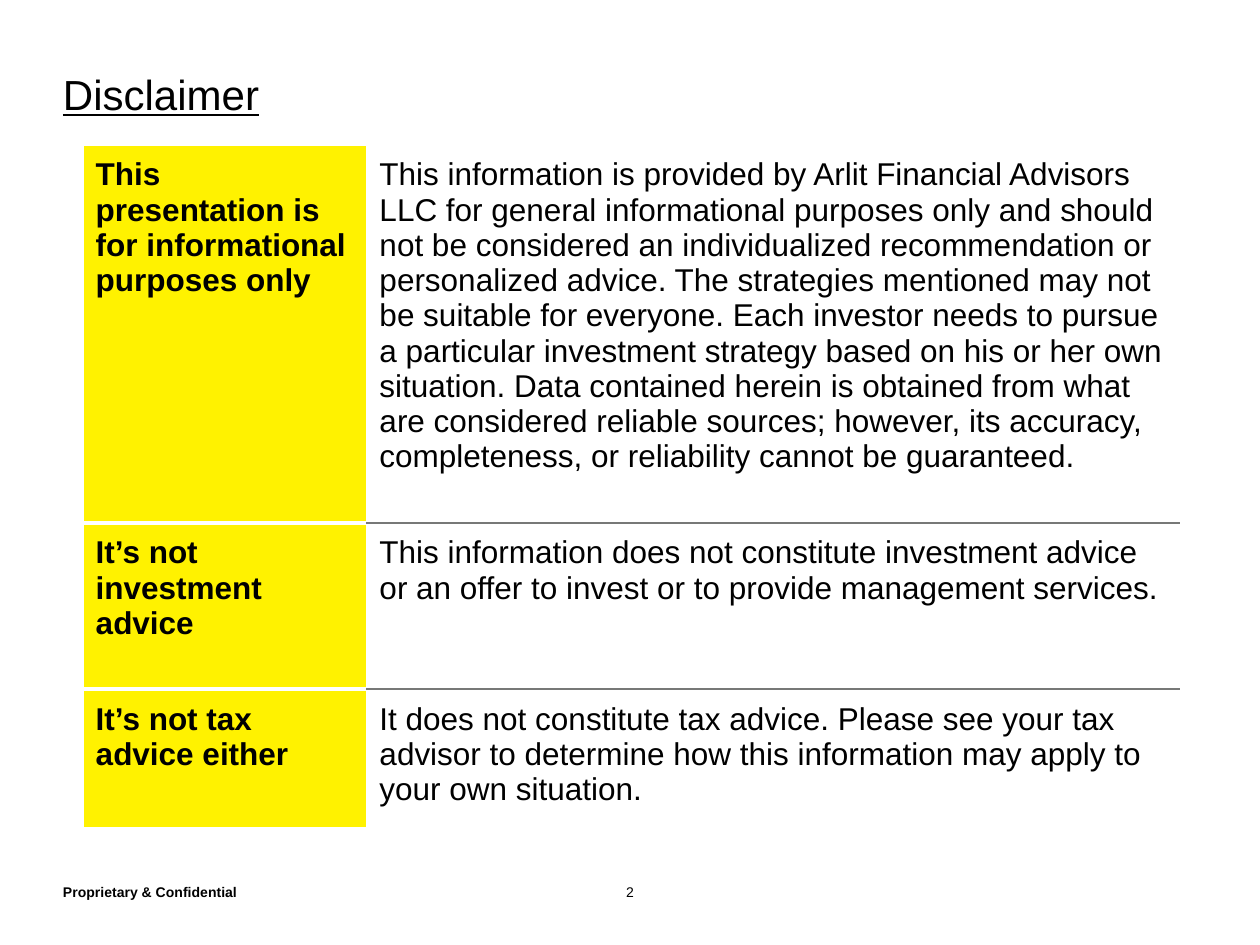
from dataclasses import dataclass
from typing import Any

from lxml.etree import SubElement
from pptx import Presentation
from pptx.dml.color import RGBColor
from pptx.enum.text import MSO_ANCHOR as Anchor, PP_ALIGN as Align
from pptx.oxml.ns import qn
from pptx.util import Cm, Pt

BLACK = RGBColor(0x00, 0x00, 0x00)
WHITE = RGBColor(0xFF, 0xFF, 0xFF)
YELLOW = RGBColor(0xFF, 0xF2, 0x00)
GRAY = RGBColor(0x77, 0x78, 0x77)

BASE = {"name": "Arial", "bold": False}
MARGINS = ("margin_left", "margin_top", "margin_right", "margin_bottom")
COL_WIDTHS = (Cm(5.72), Cm(16.38))


@dataclass
class Label:
    text: str
    left: Cm
    top: Cm
    width: Cm
    height: Cm
    font: dict[str, Any]
    anchor: Any = Anchor.BOTTOM
    align: Any = Align.LEFT
    spacing: Any = None


@dataclass
class Row:
    heading: str
    body: str
    height: Cm


LABELS = [
    Label("Disclaimer", Cm(1.27), Cm(1.27), Cm(22.86), Cm(2.03),
          {"size": Pt(24), "underline": True}, anchor=Anchor.TOP, spacing=Pt(32)),
    Label("Proprietary & Confidential", Cm(1.27), Cm(17.81), Cm(20.73), Cm(0.33),
          {"size": Pt(8), "bold": True}),
    Label("2", Cm(12.04), Cm(17.81), Cm(1.32), Cm(0.33), {"size": Pt(8)},
          align=Align.CENTER),
]

ROWS = [
    Row("This presentation is for informational purposes only",
        "This information is provided by Arlit Financial Advisors LLC for general "
        "informational purposes only and should not be considered an individualized "
        "recommendation or personalized advice. The strategies mentioned may not be "
        "suitable for everyone. Each investor needs to pursue a particular investment "
        "strategy based on his or her own situation. Data contained herein is obtained "
        "from what are considered reliable sources; however, its accuracy, "
        "completeness, or reliability cannot be guaranteed.", Cm(7.62)),
    Row("It’s not investment advice",
        "This information does not constitute investment advice or an offer to invest "
        "or to provide management services.", Cm(3.35)),
    Row("It’s not tax advice either",
        "It does not constitute tax advice. Please see your tax advisor to determine "
        "how this information may apply to your own situation.", Cm(2.62)),
]


def set_attrs(obj: Any, values: dict[str, Any]) -> None:
    """Set each named attribute on an object."""
    for name, value in values.items():
        setattr(obj, name, value)


def write(p: Any, text: str, font: dict[str, Any]) -> None:
    """Add one formatted run to a paragraph."""
    r = p.add_run()
    r.text = text
    set_attrs(r.font, BASE | font)
    r.font.color.rgb = BLACK


def add_label(s: Any, label: Label) -> None:
    """Draw a text box without margins."""
    sp = s.shapes.add_textbox(label.left, label.top, label.width, label.height)
    tf = sp.text_frame
    set_attrs(tf, dict.fromkeys(MARGINS, 0))
    set_attrs(tf, {"word_wrap": True, "vertical_anchor": label.anchor})
    p = tf.paragraphs[0]
    set_attrs(p, {"alignment": label.align, "line_spacing": label.spacing})
    write(p, label.text, label.font)


def add_border(cell: Any, side: str, color: RGBColor, width: Pt) -> None:
    """Draw one side of a cell border."""
    ln = SubElement(cell._tc.get_or_add_tcPr(), qn(f"a:ln{side}"), w=str(int(width)))
    SubElement(SubElement(ln, qn("a:solidFill")), qn("a:srgbClr"), val=str(color))


def format_cell(cell: Any, text: str, is_heading: bool, is_first: bool, is_last: bool) -> None:
    """Fill in a cell with its text, borders and background."""
    outer = (WHITE, Pt(1))
    inner = (WHITE, Pt(3)) if is_heading else (GRAY, Pt(1.5))
    borders = {"L": outer, "R": outer, "T": outer if is_first else inner,
               "B": outer if is_last else inner}
    set_attrs(cell, dict.fromkeys(MARGINS, Cm(0.25)))
    for side, (color, width) in borders.items():
        add_border(cell, side, color, width)
    if is_heading:
        cell.fill.solid()
        cell.fill.fore_color.rgb = YELLOW
    else:
        cell.fill.background()
    write(cell.text_frame.paragraphs[0], text, {"size": Pt(18), "bold": is_heading})


def add_disclaimers(s: Any, rows: list[Row]) -> None:
    """Draw the table of disclaimers."""
    height = sum(row.height for row in rows)
    table = s.shapes.add_table(len(rows), len(COL_WIDTHS), Cm(1.68), Cm(2.92),
                               sum(COL_WIDTHS), height).table
    set_attrs(table, {"first_row": False, "horz_banding": False})
    for column, width in zip(table.columns, COL_WIDTHS):
        column.width = width
    for i, row in enumerate(rows):
        table.rows[i].height = row.height
        for j, text in enumerate((row.heading, row.body)):
            format_cell(table.cell(i, j), text, j == 0, i == 0, i == len(rows) - 1)


def main() -> None:
    """Build and save the disclaimer slide."""
    prs = Presentation()
    set_attrs(prs, {"slide_width": Cm(25.4), "slide_height": Cm(19.05)})
    s = prs.slides.add_slide(prs.slide_layouts[6])
    for label in LABELS:
        add_label(s, label)
    add_disclaimers(s, ROWS)
    prs.save("out.pptx")


if __name__ == "__main__":
    main()
